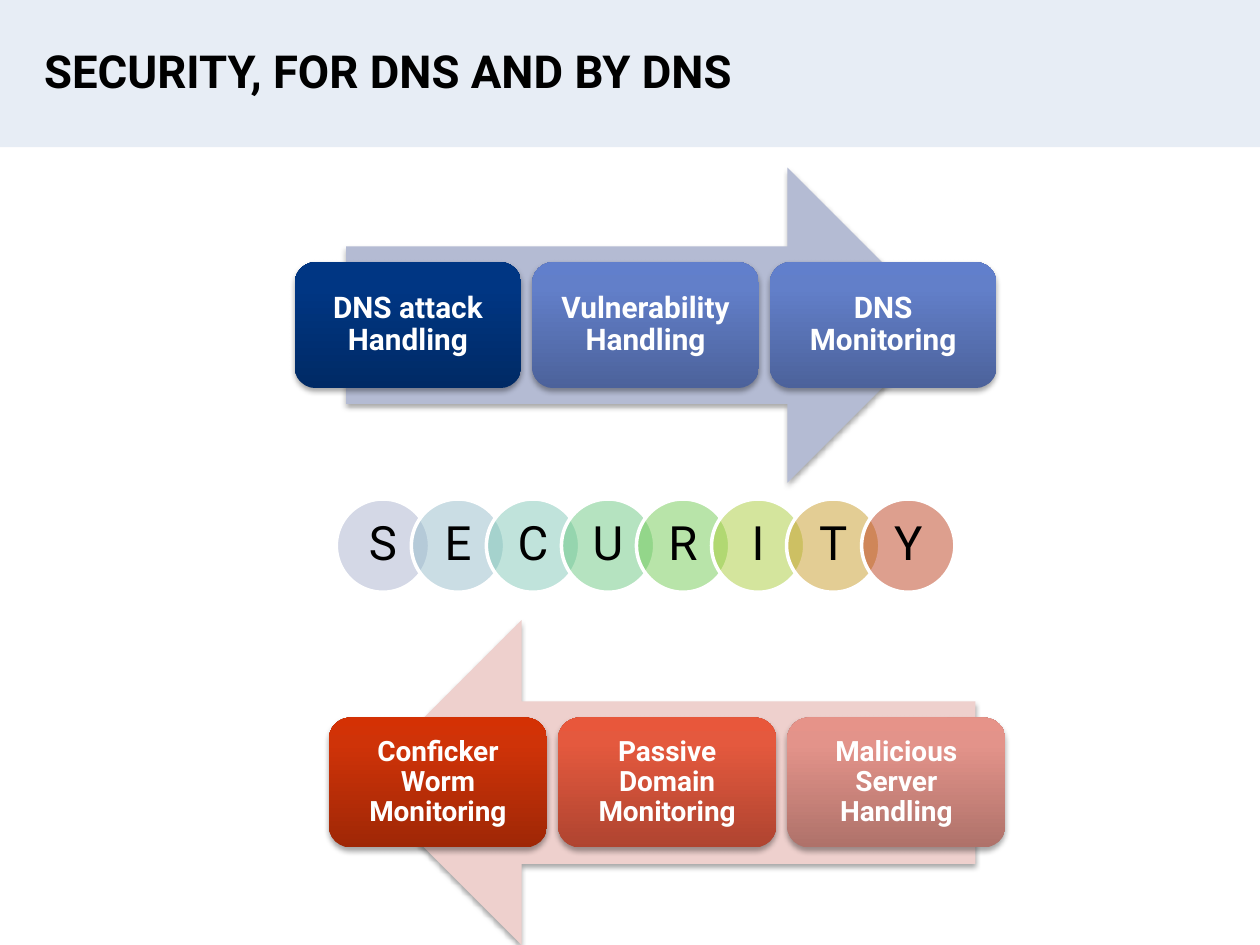
from lxml.etree import SubElement
from pptx import Presentation
from pptx.dml.color import RGBColor
from pptx.enum.shapes import MSO_SHAPE
from pptx.enum.text import MSO_ANCHOR, PP_ALIGN
from pptx.oxml import parse_xml
from pptx.oxml.ns import nsdecls, qn
from pptx.util import Cm, Pt

BLACK = RGBColor(0, 0, 0)
WHITE = RGBColor(0xFF, 0xFF, 0xFF)
BAND = RGBColor(0x14, 0x4F, 0xA3)
MAUVE = RGBColor(0xB4, 0xBB, 0xD3)
PINK = RGBColor(0xEE, 0xD0, 0xCD)
NAVY = (RGBColor(0x00, 0x2A, 0x65), RGBColor(0x00, 0x36, 0x83), RGBColor(0x00, 0x36, 0x84))
BLUE = (RGBColor(0x4C, 0x62, 0x9B), RGBColor(0x62, 0x7F, 0xC9), RGBColor(0x61, 0x7F, 0xCC))
RUST = (RGBColor(0x9F, 0x27, 0x06), RGBColor(0xCF, 0x33, 0x08), RGBColor(0xD4, 0x31, 0x04))
RED = (RGBColor(0xAF, 0x44, 0x30), RGBColor(0xE4, 0x59, 0x3E), RGBColor(0xE8, 0x57, 0x3B))
ROSE = (RGBColor(0xAF, 0x72, 0x6A), RGBColor(0xE3, 0x93, 0x8A), RGBColor(0xE6, 0x93, 0x89))
RINGS = (
    RGBColor(0xAA, 0xB2, 0xCE), RGBColor(0x97, 0xBD, 0xCB),
    RGBColor(0x82, 0xC9, 0xB8), RGBColor(0x6C, 0xC9, 0x83),
    RGBColor(0x73, 0xCA, 0x55), RGBColor(0xAB, 0xCD, 0x3C),
    RGBColor(0xC8, 0x9D, 0x2A), RGBColor(0xBD, 0x41, 0x1F),
)


def style(item, values):
    """Set each named value on the item."""
    for name, value in values.items():
        setattr(item, name, value)


def write(shape, text, size, color, bold=False, align=PP_ALIGN.CENTER, inset=0.18):
    """Put one formatted paragraph in the shape."""
    frame = shape.text_frame
    sides = ("margin_left", "margin_top", "margin_right", "margin_bottom")
    style(frame, dict.fromkeys(sides, Cm(inset)))
    style(frame, {"word_wrap": True, "vertical_anchor": MSO_ANCHOR.MIDDLE})
    para = frame.paragraphs[0]
    para.text = text
    style(para, {"alignment": align, "line_spacing": 0.9})
    style(para.runs[0].font, {"name": "Roboto", "size": Pt(size), "bold": bold})
    para.runs[0].font.color.rgb = color


def draw(slide, kind, box, color=None, alpha=None):
    """Add a shape without line or shadow, filled if a colour is given."""
    shape = slide.shapes.add_shape(kind, *map(Cm, box))
    shape.shadow.inherit = False
    shape.line.fill.background()
    if color is not None:
        shape.fill.solid()
        shape.fill.fore_color.rgb = color
    if alpha:
        tint = shape.fill._xPr.find(qn("a:solidFill"))[0]
        SubElement(tint, qn("a:alpha"), val=str(alpha * 1000))
    return shape


def shade(shape):
    """Give the shape a soft shadow below it."""
    shape._element.spPr.find(qn("a:effectLst")).append(parse_xml(
        f'<a:outerShdw {nsdecls("a")} blurRad="{Pt(3.1)}" dist="{Pt(1.8)}" '
        'dir="5400000" rotWithShape="0"><a:srgbClr val="000000">'
        '<a:alpha val="35000"/></a:srgbClr></a:outerShdw>'))


def blend(shape, colors):
    """Fill the shape with a gradient that rises from the bottom."""
    stops = "".join(
        f'<a:gs pos="{spot * 1000}"><a:srgbClr val="{color}"/></a:gs>'
        for spot, color in zip((0, 80, 100), colors))
    shape._element.spPr.find(qn("a:prstGeom")).addnext(parse_xml(
        f'<a:gradFill {nsdecls("a")} rotWithShape="1"><a:gsLst>{stops}</a:gsLst>'
        '<a:lin ang="16200000" scaled="0"/></a:gradFill>'))


def header(slide, box, text):
    """Draw the title band with its title."""
    left, top, width, height = box
    draw(slide, MSO_SHAPE.RECTANGLE, box, BAND, 10)
    title = slide.shapes.add_textbox(Cm(left + 0.64), Cm(top), Cm(width - 5.08), Cm(height))
    write(title, text, 26, BLACK, True, PP_ALIGN.LEFT, 0.25)


def flow(slide, box, span, turn, color, size, cards):
    """Draw a wide arrow with a row of cards across its middle."""
    left, top, width, height = box
    arrow = draw(slide, MSO_SHAPE.RIGHT_ARROW,
                 (left + (width - span) / 2, top, span, height), color)
    arrow.rotation = turn
    shade(arrow)
    gap = 0.22
    wide = (width - gap * (len(cards) - 1)) / len(cards)
    for i, (text, colors) in enumerate(cards):
        spot = (left + i * (wide + gap), top + height * 0.3, wide, height * 0.4)
        card = draw(slide, MSO_SHAPE.ROUNDED_RECTANGLE, spot)
        blend(card, colors)
        shade(card)
        write(card, text, size, WHITE, True)


def chain(slide, box, word):
    """Draw overlapping circles that spell the word."""
    left, top, width, height = box
    step = (width - height) / (len(word) - 1)
    for i, (sign, color) in enumerate(zip(word, RINGS)):
        ring = draw(slide, MSO_SHAPE.OVAL, (left + i * step, top, height, height), color, 50)
        ring.line.color.rgb = WHITE
        ring.line.width = Pt(2)
        write(ring, sign, 27, BLACK, inset=0.1)


def main():
    """Build and save the slide."""
    deck = Presentation()
    style(deck, {"slide_width": Cm(25.4), "slide_height": Cm(19.05)})
    slide = deck.slides.add_slide(deck.slide_layouts[6])
    header(slide, (0, 0, 25.4, 2.97), "SECURITY, FOR DNS AND BY DNS")
    flow(slide, (5.94, 3.38, 14.15, 6.35), 12.07, 0, MAUVE, 17, (
        ("DNS attack Handling", NAVY),
        ("Vulnerability Handling", BLUE),
        ("DNS Monitoring", BLUE)))
    flow(slide, (6.63, 12.5, 13.64, 6.55), 12.42, 180, PINK, 16, (
        ("Conficker Worm Monitoring", RUST),
        ("Passive Domain Monitoring", RED),
        ("Malicious Server Handling", ROSE)))
    chain(slide, (6.78, 10.06, 12.47, 1.88), "SECURITY")
    deck.save("out.pptx")


if __name__ == "__main__":
    main()
